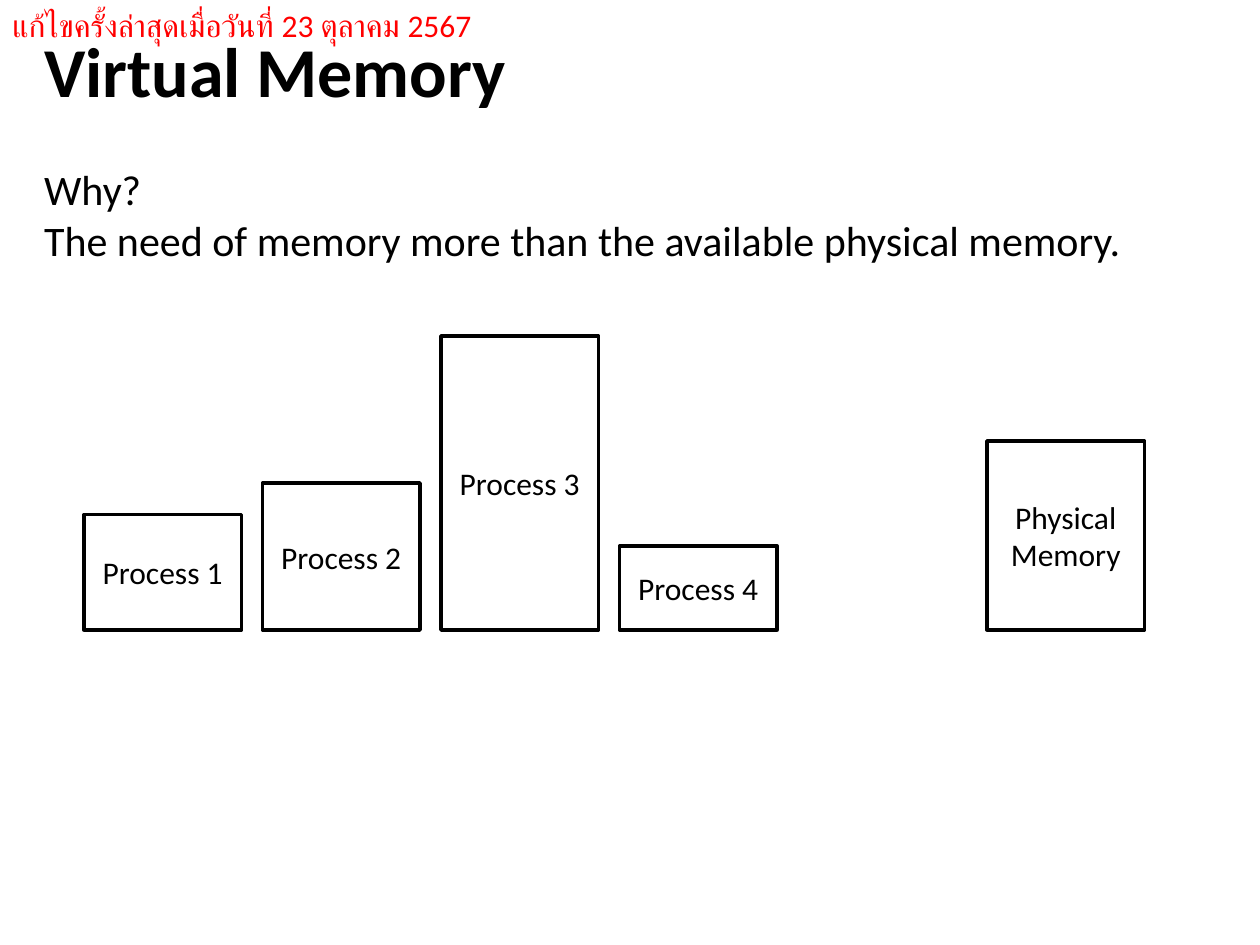
from lxml import etree
from pptx import Presentation
from pptx import util as u
from pptx.dml.color import RGBColor
from pptx.enum import shapes, text
from pptx.oxml.ns import qn


def place(part, left, top, width, height):
    part.left, part.top = u.Inches(left), u.Inches(top)
    part.width, part.height = u.Inches(width), u.Inches(height)


def write(part, words, size, color="000000", bold=False,
          align=text.PP_ALIGN.LEFT, anchor=text.MSO_ANCHOR.TOP):
    frame = part.text_frame
    frame.text = words
    frame.word_wrap = True
    frame.auto_size = text.MSO_AUTO_SIZE.NONE
    frame.vertical_anchor = anchor
    for paragraph in frame.paragraphs:
        paragraph.alignment = align
        paragraph.space_before = u.Pt(0)
        for run in paragraph.runs:
            run.font.name = "Calibri"
            run.font.size = u.Pt(size)
            run.font.bold = bold
            run.font.color.rgb = RGBColor.from_string(color)


deck = Presentation()
deck.slide_width, deck.slide_height = u.Inches(10), u.Inches(7.5)
slide = deck.slides.add_slide(deck.slide_layouts[1])

heading = slide.shapes.title
place(heading, 0.25, 0.17, 9.5, 0.77)
write(heading, "Virtual Memory", 40, bold=True)

reason = slide.placeholders[1]
place(reason, 0.25, 1.25, 9.5, 0.91)
write(reason, "Why?\nThe need of memory more than the available physical memory.", 24)
for paragraph in reason.text_frame.paragraphs:
    properties = paragraph._p.get_or_add_pPr()
    properties.set("marL", "0")
    properties.set("indent", "0")
    etree.SubElement(properties, qn("a:buNone"))

grid = 1 / 12
block_width, pitch, first_column, floor = 15, 17, 8, 60
process_heights = [11, 14, 28, 8]
blocks = [(f"Process {i + 1}", first_column + i * pitch, rows)
          for i, rows in enumerate(process_heights)]
blocks.append(("Physical\vMemory", 94, 18))

for label, column, rows in blocks:
    block = slide.shapes.add_shape(shapes.MSO_SHAPE.RECTANGLE, 0, 0, 0, 0)
    place(block, column * grid, (floor - rows) * grid, block_width * grid, rows * grid)
    block.shadow.inherit = False
    block.fill.background()
    block.line.color.rgb = RGBColor.from_string("000000")
    block.line.width = u.Pt(2)
    write(block, label, 18, align=text.PP_ALIGN.CENTER, anchor=text.MSO_ANCHOR.MIDDLE)

revision = slide.shapes.add_textbox(0, 0, 0, 0)
place(revision, 0, 0, 10, 0.4)
write(revision, "แก้ไขครั้งล่าสุดเมื่อวันที่ 23 ตุลาคม 2567", 18, "FF0000")

deck.save("out.pptx")
